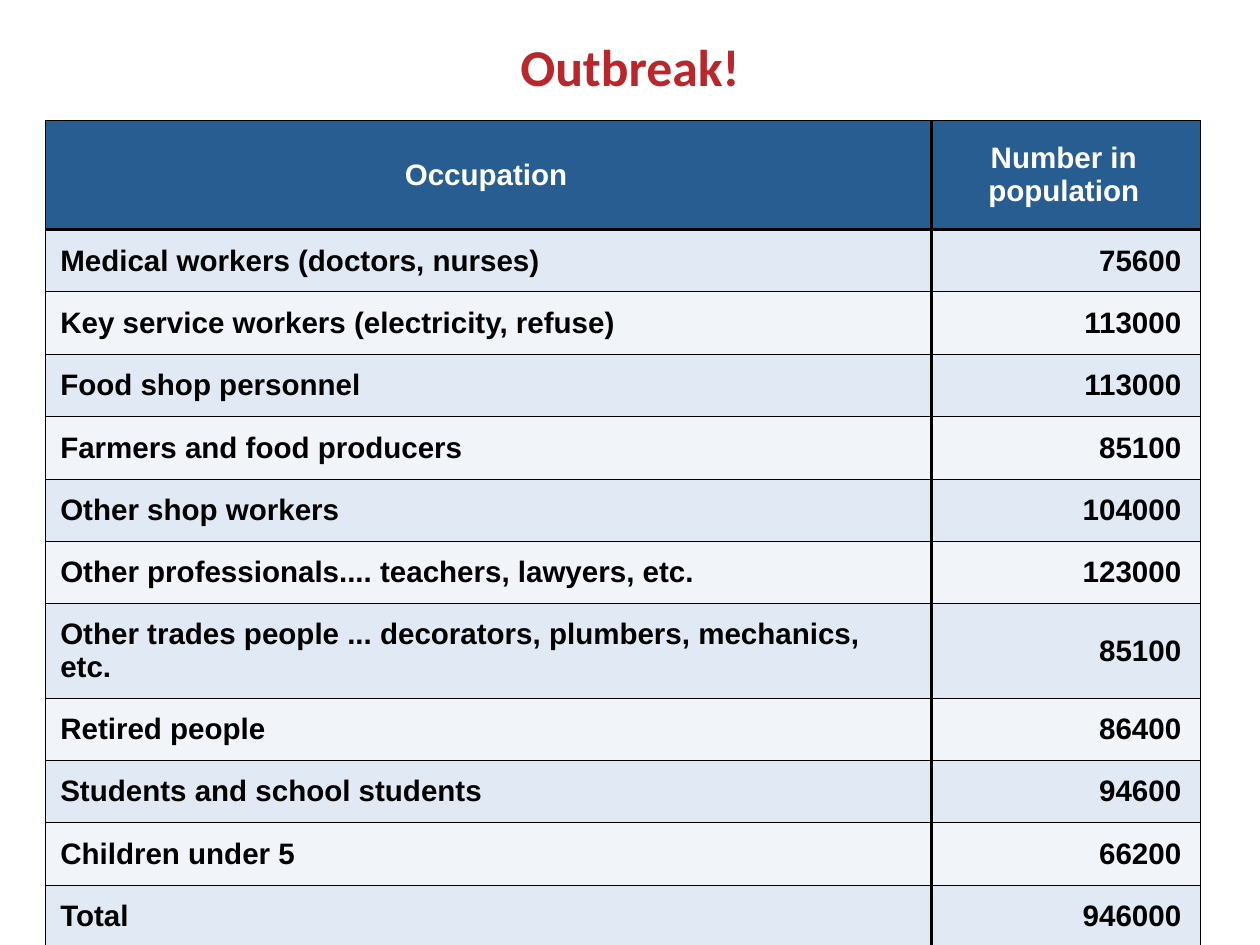
from lxml.etree import SubElement
from pptx import Presentation
from pptx.dml.color import RGBColor
from pptx.enum.text import MSO_ANCHOR as Anchor, PP_ALIGN as Align
from pptx.oxml.ns import qn
from pptx.util import Pt

# Content
TITLE = "Outbreak!"
HEADER = ("Occupation", "Number in population")
OCCUPATIONS = [
    ("Medical workers (doctors, nurses)", 75600),
    ("Key service workers (electricity, refuse)", 113000),
    ("Food shop personnel", 113000),
    ("Farmers and food producers", 85100),
    ("Other shop workers", 104000),
    ("Other professionals.... teachers, lawyers, etc.", 123000),
    ("Other trades people ... decorators, plumbers, mechanics, etc.", 85100),
    ("Retired people", 86400),
    ("Students and school students", 94600),
    ("Children under 5", 66200),
    ("Total", 946000),
]

# Layout and colours
COLUMN_WIDTHS = (720, 219)
HEADER_HEIGHT, ROW_HEIGHT = 88.6, 50.7
HEADER_FILL, BANDS = "275D90", ("E1EAF4", "F1F5FA")
BLACK, WHITE, RED = "000000", "FFFFFF", "B9262C"


def color(value):
    return RGBColor.from_string(value)


def write(frame, text, font="Arial", size=24, fill=BLACK, align=Align.LEFT):
    frame.word_wrap = True
    paragraph = frame.paragraphs[0]
    paragraph.alignment = align
    run = paragraph.add_run()
    run.text = text
    run.font.name, run.font.size, run.font.bold = font, Pt(size), True
    run.font.color.rgb = color(fill)


def set_margins(target, left, top, right, bottom):
    target.margin_left, target.margin_top = Pt(left), Pt(top)
    target.margin_right, target.margin_bottom = Pt(right), Pt(bottom)
    target.vertical_anchor = Anchor.MIDDLE


def set_borders(cell, **widths):
    properties = cell._tc.get_or_add_tcPr()
    for position, side in enumerate("LRTB"):
        line = properties.makeelement(qn(f"a:ln{side}"), {"w": str(Pt(widths[side]))})
        fill = SubElement(line, qn("a:solidFill"))
        SubElement(fill, qn("a:srgbClr"), val=BLACK)
        properties.insert(position, line)


def add_title(slide):
    box = slide.shapes.add_textbox(Pt(51), Pt(0), Pt(922), Pt(107))
    set_margins(box.text_frame, 4, 4, 4, 4)
    write(box.text_frame, TITLE, font="Calibri", size=42, fill=RED, align=Align.CENTER)


def add_occupation_table(slide):
    rows = [HEADER, *OCCUPATIONS]
    height = HEADER_HEIGHT + ROW_HEIGHT * len(OCCUPATIONS)
    table = slide.shapes.add_table(
        len(rows), len(HEADER), Pt(37), Pt(98), Pt(sum(COLUMN_WIDTHS)), Pt(height)
    ).table
    for column, width in zip(table.columns, COLUMN_WIDTHS):
        column.width = Pt(width)

    for i, values in enumerate(rows):
        is_header = i == 0
        table.rows[i].height = Pt(HEADER_HEIGHT if is_header else ROW_HEIGHT)
        for j, value in enumerate(values):
            cell = table.cell(i, j)
            set_margins(cell, 12, 11.6, 16, 11.6)
            cell.fill.solid()
            cell.fill.fore_color.rgb = color(HEADER_FILL if is_header else BANDS[(i - 1) % 2])
            set_borders(
                cell,
                L=2 if j == 1 else 1,
                R=2 if j == 0 else 1,
                T=3 if i == 1 else 1,
                B=3 if is_header else 1,
            )
            body_align = Align.RIGHT if j == 1 else Align.LEFT
            write(
                cell.text_frame,
                str(value),
                fill=WHITE if is_header else BLACK,
                align=Align.CENTER if is_header else body_align,
            )


def main():
    presentation = Presentation()
    presentation.slide_width, presentation.slide_height = Pt(1024), Pt(768)
    slide = presentation.slides.add_slide(presentation.slide_layouts[6])
    add_occupation_table(slide)
    add_title(slide)
    presentation.save("out.pptx")


if __name__ == "__main__":
    main()
